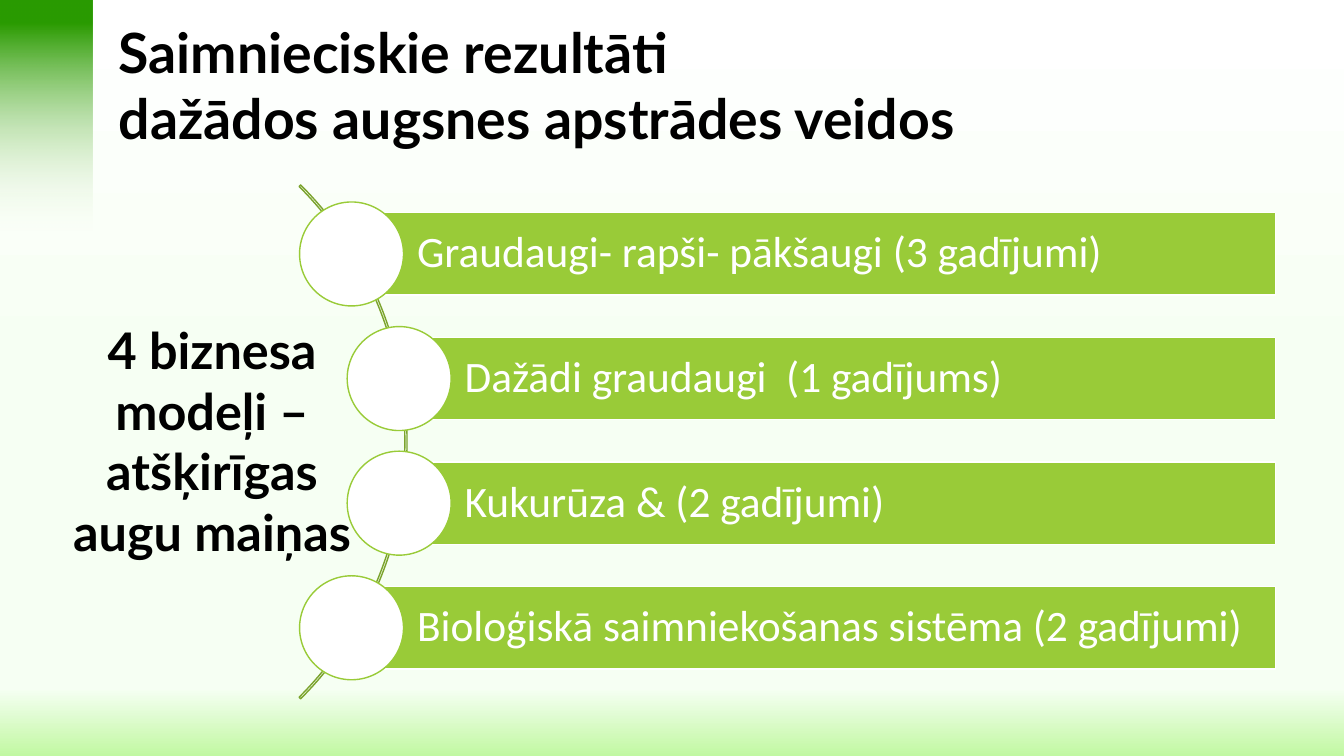
from lxml import etree
from pptx import Presentation
from pptx.dml.color import RGBColor
from pptx.enum.shapes import MSO_SHAPE
from pptx.enum.text import MSO_ANCHOR, PP_ALIGN
from pptx.oxml.ns import qn
from pptx.util import Cm, Pt

TITLE = ["Saimnieciskie rezultāti", "dažādos augsnes apstrādes veidos"]
LABEL = ["4 biznesa modeļi – atšķirīgas augu maiņas"]
# text, left edge of the bar in cm
MODELS = [
    ("Graudaugi- rapši- pākšaugi (3 gadījumi)", 8.86),
    ("Dažādi graudaugi  (1 gadījums)", 10.06),
    ("Kukurūza & (2 gadījumi)", 10.06),
    ("Bioloģiskā saimniekošanas sistēma (2 gadījumi)", 8.86),
]
COLORS = {"text": "000000", "white": "FFFFFF", "bar": "99CB38", "arc": "7BA32D"}
# position in %, colour, opacity in %
PAGE_STOPS = [(1, "FFFFFF", 100), (50, "F6FFF3", 100), (91, "F6FFF3", 100),
              (100, "C1F8A2", 100)]
CORNER_STOPS = [(10, "2A9B00", 100), (100, "ECF9DF", 0)]

FIRST_TOP, PITCH, BAR_H, BAR_RIGHT = 5.36, 3.14, 2.08, 32.15
CIRCLE = 2.62
ARC_LEFT, ARC_TOP, ARC_SIZE = -8.05, 1.98, 18.31


def color(name):
    return RGBColor.from_string(COLORS[name])


def fill_down(fill, stops):
    """Give a fill a top-to-bottom gradient with the listed stops."""
    fill.gradient()
    grad = fill._fill._gradFill
    stop_list = grad.find(qn("a:gsLst"))
    for old in list(stop_list):
        stop_list.remove(old)
    for pos, rgb, opacity in stops:
        gs = etree.SubElement(stop_list, qn("a:gs"), pos=str(pos * 1000))
        clr = etree.SubElement(gs, qn("a:srgbClr"), val=rgb)
        if opacity < 100:
            etree.SubElement(clr, qn("a:alpha"), val=str(opacity * 1000))
    grad.find(qn("a:lin")).set("ang", "5400000")


def add_shape(s, kind, left, top, width, height, fill=None, line=None):
    sp = s.shapes.add_shape(kind, Cm(left), Cm(top), Cm(width), Cm(height))
    sp.shadow.inherit = False
    if fill:
        sp.fill.solid()
        sp.fill.fore_color.rgb = color(fill)
    else:
        sp.fill.background()
    if line:
        sp.line.color.rgb = color(line)
        sp.line.width = Pt(1)
    else:
        sp.line.fill.background()
    return sp


def write(p, lines, size, font, ink, bold=False):
    for i, line in enumerate(lines):
        if i:
            p.add_line_break()
        r = p.add_run()
        r.text = line
        r.font.size, r.font.name, r.font.bold = Pt(size), font, bold
        r.font.color.rgb = color(ink)


def add_heading(s, lines, box, size, align, anchor):
    tf = s.shapes.add_textbox(*map(Cm, box)).text_frame
    tf.word_wrap = True
    tf.vertical_anchor = anchor
    tf.paragraphs[0].alignment = align
    write(tf.paragraphs[0], lines, size, "Lato", "text", bold=True)


def add_model(s, row, text, left):
    top = FIRST_TOP + row * PITCH
    bar = add_shape(s, MSO_SHAPE.RECTANGLE, left, top, BAR_RIGHT - left, BAR_H,
                    "bar", "white")
    tf = bar.text_frame
    tf.word_wrap = True
    tf.vertical_anchor = MSO_ANCHOR.MIDDLE
    tf.margin_left = Cm(1.65)
    tf.margin_top = tf.margin_right = tf.margin_bottom = Cm(0.22)
    p = tf.paragraphs[0]
    p.alignment = PP_ALIGN.LEFT
    p.line_spacing = 0.9
    write(p, [text], 31, "Calibri", "white")
    add_shape(s, MSO_SHAPE.OVAL, left - CIRCLE / 2, top + (BAR_H - CIRCLE) / 2,
              CIRCLE, CIRCLE, "white", "bar")


def main():
    prs = Presentation()
    prs.slide_width, prs.slide_height = Cm(33.87), Cm(19.05)
    s = prs.slides.add_slide(prs.slide_layouts[6])
    fill_down(s.background.fill, PAGE_STOPS)
    corner = add_shape(s, MSO_SHAPE.RECTANGLE, -0.05, 0, 2.39, 5.82)
    fill_down(corner.fill, CORNER_STOPS)
    add_heading(s, TITLE, (2.74, 0.53, 28.2, 3.18), 39.6, PP_ALIGN.LEFT,
                MSO_ANCHOR.MIDDLE)

    arc = add_shape(s, MSO_SHAPE.BLOCK_ARC, ARC_LEFT, ARC_TOP, ARC_SIZE, ARC_SIZE,
                    line="arc")
    for i, value in enumerate((189, 27, 0.003)):
        arc.adjustments[i] = value
    for row, (text, left) in enumerate(MODELS):
        add_model(s, row, text, left)

    add_heading(s, LABEL, (1.14, 7.92, 8.41, 6.4), 36, PP_ALIGN.CENTER,
                MSO_ANCHOR.TOP)
    prs.save("out.pptx")


if __name__ == "__main__":
    main()
